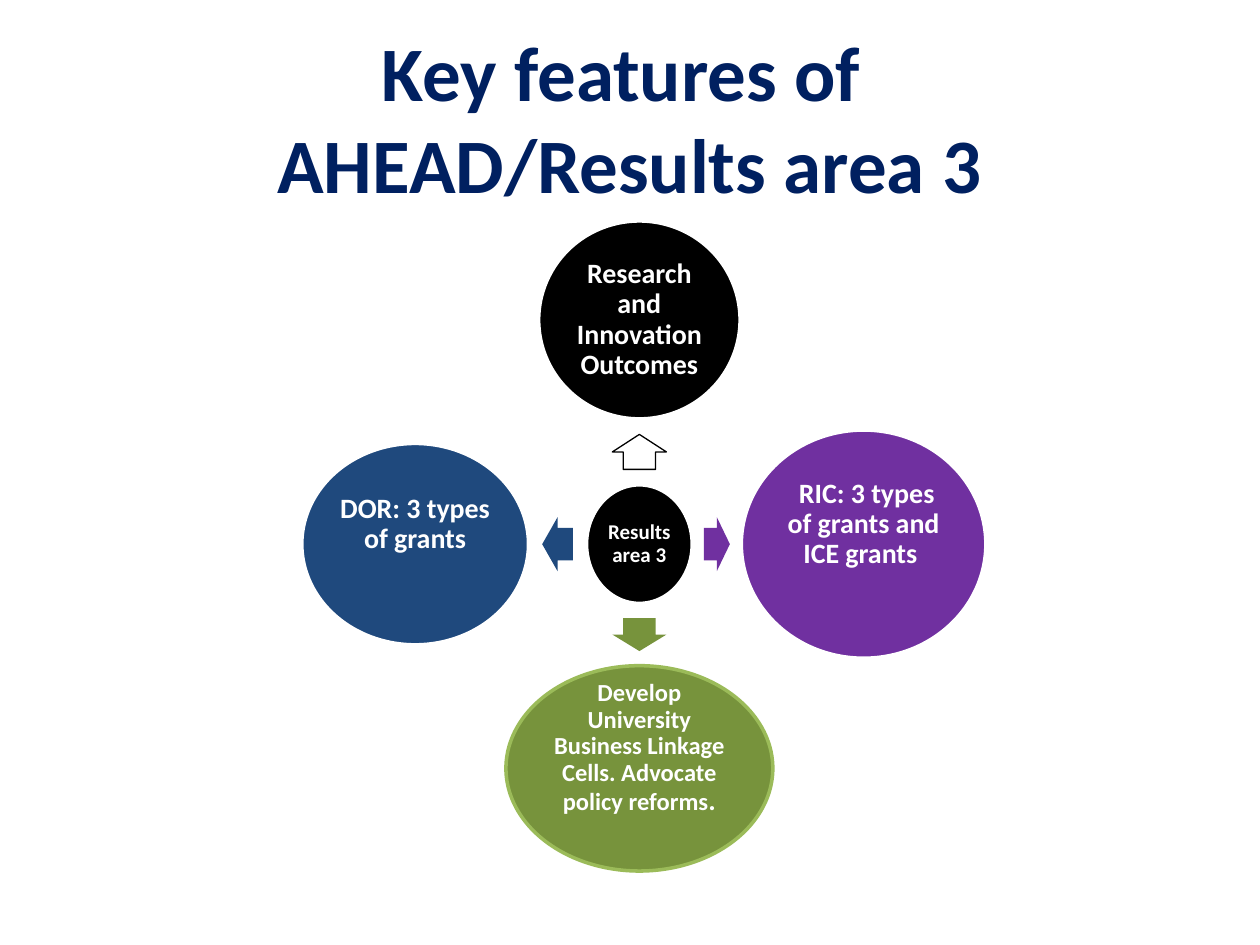
import math
from dataclasses import dataclass

import pptx
import pptx.dml.color
import pptx.enum.shapes
import pptx.enum.text
import pptx.shapes.autoshape
import pptx.slide
import pptx.util

Cm = pptx.util.Cm
Pt = pptx.util.Pt
Shape = pptx.enum.shapes.MSO_SHAPE


@dataclass(frozen=True)
class Theme:
    font: str = "Calibri"
    title: str = "002060"
    white: str = "FFFFFF"
    black: str = "000000"
    purple: str = "7030A0"
    green: str = "77933C"
    light_green: str = "9BBB59"
    blue: str = "1F497D"
    title_size: int = 44
    large_size: int = 16
    medium_size: int = 14
    small_size: int = 12


THEME = Theme()


@dataclass(frozen=True)
class Circle:
    """An ellipse with its text; lengths in centimetres."""
    text: str
    width: float
    height: float
    fill: str
    size: int = THEME.large_size
    outline: str = THEME.white
    bottom_inset: float = 0.05
    full_stop_size: int = 0


@dataclass(frozen=True)
class Spoke:
    """A circle around the hub and the arrow that points to it."""
    circle: Circle
    angle: int  # clockwise from the right
    arrow_fill: str
    arrow_outline: str = ""


# Diagram geometry in centimetres
CENTER_X, CENTER_Y = 12.89, 10.97
ORBIT = 4.52
ARROW_WIDTH = 1.09
ARROW_SHARE = 0.53  # part of the gap that an arrow fills
RAISED = 0.85  # bottom inset that lifts text above the middle

HUB = Circle("Results area 3", 2.13, 2.39, THEME.black, THEME.small_size)
SPOKES = [
    Spoke(Circle("Research and Innovation Outcomes", 4.06, 3.99, THEME.black),
          270, THEME.white, THEME.black),
    Spoke(Circle(" RIC: 3 types of grants and ICE grants ", 4.93, 4.6,
                 THEME.purple, bottom_inset=RAISED),
          0, THEME.purple),
    Spoke(Circle("Develop University Business Linkage Cells. Advocate policy reforms",
                 5.38, 4.14, THEME.green, THEME.medium_size, THEME.light_green,
                 RAISED, THEME.large_size),
          90, THEME.green),
    Spoke(Circle("DOR: 3 types of grants", 4.57, 4.06, THEME.blue,
                 bottom_inset=RAISED),
          180, THEME.blue),
]


def rgb(color: str) -> pptx.dml.color.RGBColor:
    return pptx.dml.color.RGBColor.from_string(color)


def format_paragraph(para, size: int, color: str) -> None:
    para.alignment = pptx.enum.text.PP_ALIGN.CENTER
    para.font.name = THEME.font
    para.font.size = Pt(size)
    para.font.bold = True
    para.font.color.rgb = rgb(color)


def add_centered(page: pptx.slide.Slide, kind: Shape, x: float, y: float,
                 width: float, height: float, fill: str, outline: str,
                 line_width: float) -> pptx.shapes.autoshape.Shape:
    """Add a preset shape around a middle point."""
    shape = page.shapes.add_shape(kind, Cm(x - width / 2), Cm(y - height / 2),
                                  Cm(width), Cm(height))
    shape.shadow.inherit = False
    shape.fill.solid()
    shape.fill.fore_color.rgb = rgb(fill)
    if outline:
        shape.line.color.rgb = rgb(outline)
        shape.line.width = Pt(line_width)
    else:
        shape.line.fill.background()
    return shape


def draw_circle(page: pptx.slide.Slide, circle: Circle, x: float, y: float) -> None:
    shape = add_centered(page, Shape.OVAL, x, y, circle.width, circle.height,
                         circle.fill, circle.outline, 2)
    frame = shape.text_frame
    frame.word_wrap = True
    frame.vertical_anchor = pptx.enum.text.MSO_ANCHOR.MIDDLE
    frame.margin_left = frame.margin_right = frame.margin_top = Cm(0.05)
    frame.margin_bottom = Cm(circle.bottom_inset)
    para = frame.paragraphs[0]
    para.add_run().text = circle.text
    if circle.full_stop_size:
        span = para.add_run()
        span.text = "."
        span.font.size = Pt(circle.full_stop_size)
    format_paragraph(para, circle.size, THEME.white)
    para.line_spacing = 0.9


def draw_spoke(page: pptx.slide.Slide, spoke: Spoke) -> None:
    across = round(math.cos(math.radians(spoke.angle)))
    down = round(math.sin(math.radians(spoke.angle)))
    circle = spoke.circle

    # The arrow sits in the middle of the gap between hub and circle
    hub_size, circle_size = ((HUB.width, circle.width) if across
                             else (HUB.height, circle.height))
    gap_start = hub_size / 2
    gap_end = ORBIT - circle_size / 2
    middle = (gap_start + gap_end) / 2
    arrow = add_centered(page, Shape.RIGHT_ARROW,
                         CENTER_X + across * middle, CENTER_Y + down * middle,
                         (gap_end - gap_start) * ARROW_SHARE, ARROW_WIDTH,
                         spoke.arrow_fill, spoke.arrow_outline, 0.75)
    arrow.adjustments[0] = 0.6
    arrow.adjustments[1] = 0.5
    arrow.rotation = spoke.angle

    draw_circle(page, circle, CENTER_X + across * ORBIT, CENTER_Y + down * ORBIT)


def draw_title(page: pptx.slide.Slide) -> None:
    title = page.shapes.title
    title.left, title.top = Cm(1.27), Cm(0.76)
    title.width, title.height = Cm(22.86), Cm(3.18)
    frame = title.text_frame
    frame.text = "Key features of \vAHEAD/Results area 3"
    frame.auto_size = pptx.enum.text.MSO_AUTO_SIZE.NONE
    frame.vertical_anchor = pptx.enum.text.MSO_ANCHOR.MIDDLE
    format_paragraph(frame.paragraphs[0], THEME.title_size, THEME.title)


def main() -> None:
    deck = pptx.Presentation()
    deck.slide_width, deck.slide_height = Cm(25.4), Cm(19.05)
    page = deck.slides.add_slide(deck.slide_layouts.get_by_name("Title Only"))

    draw_title(page)
    # Hub with its four spokes
    draw_circle(page, HUB, CENTER_X, CENTER_Y)
    for spoke in SPOKES:
        draw_spoke(page, spoke)

    deck.save("out.pptx")


if __name__ == "__main__":
    main()
